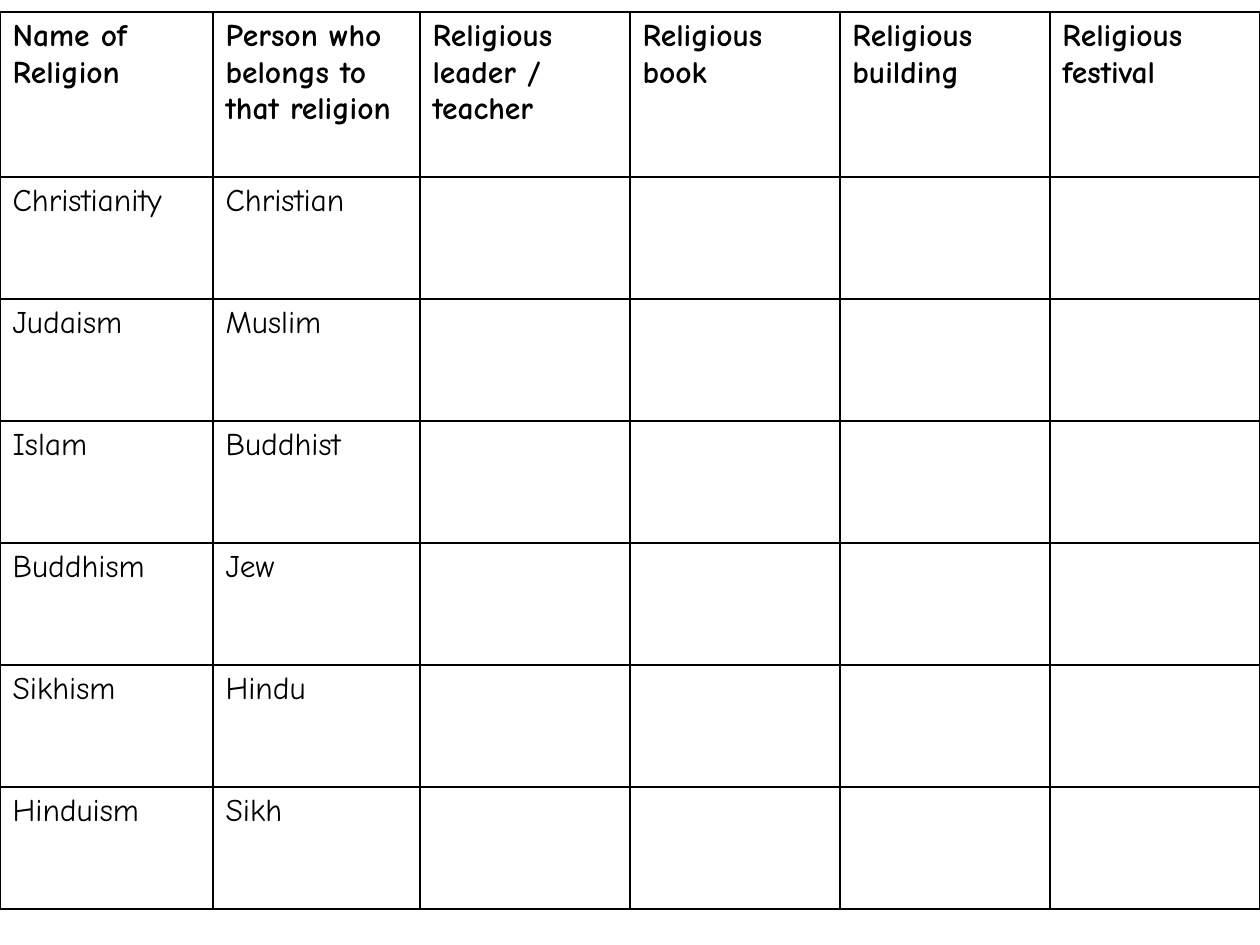
from dataclasses import dataclass

from lxml import etree
from pptx import Presentation
from pptx import util as u
from pptx.dml.color import RGBColor
from pptx.oxml.ns import qn

PX = 914400 // 126


@dataclass(frozen=True)
class Theme:
    font: str = "Comic Neue"
    size: int = 18
    ink: str = "000000"
    line: int = 1


THEME = Theme()
HEADERS = [
    "Name of Religion", "Person who belongs to that religion",
    "Religious leader / teacher", "Religious book",
    "Religious building", "Religious festival",
]
RELIGIONS = ["Christianity", "Judaism", "Islam", "Buddhism", "Sikhism", "Hinduism"]
BELIEVERS = ["Christian", "Muslim", "Buddhist", "Jew", "Hindu", "Sikh"]
COL_WIDTHS = [213, 207] + [210] * 4
HEADER_HEIGHT = 165


def px(n):
    return u.Emu(n * PX)


def add_borders(cell):
    """Draw all four edges; they must precede the cell fill in the XML."""
    tc_pr = cell._tc.get_or_add_tcPr()
    for i, side in enumerate(("lnL", "lnR", "lnT", "lnB")):
        ln = etree.Element(qn(f"a:{side}"), w=str(u.Pt(THEME.line)))
        fill = etree.SubElement(ln, qn("a:solidFill"))
        etree.SubElement(fill, qn("a:srgbClr"), val=THEME.ink)
        tc_pr.insert(i, ln)


def fill_cell(cell, words, bold):
    cell.fill.background()
    add_borders(cell)
    p = cell.text_frame.paragraphs[0]
    p.font.size = u.Pt(THEME.size)
    if words:
        r = p.add_run()
        r.text = words
        r.font.name = THEME.font
        r.font.size = u.Pt(THEME.size)
        r.font.bold = bold
        r.font.color.rgb = RGBColor.from_string(THEME.ink)


def religion_table(s, left, top, width, height):
    """Worksheet grid: a header row, then equal rows to fill in."""
    blanks = [""] * (len(HEADERS) - 2)
    rows = [HEADERS] + [[*pair, *blanks] for pair in zip(RELIGIONS, BELIEVERS)]
    table = s.shapes.add_table(
        len(rows), len(HEADERS), px(left), px(top), px(width), px(height)
    ).table
    table.first_row = table.horz_banding = False

    # Column widths and row heights
    for col, w in zip(table.columns, COL_WIDTHS):
        col.width = px(w)
    body_height = (height - HEADER_HEIGHT) // len(RELIGIONS)
    for i, row in enumerate(table.rows):
        row.height = px(body_height if i else HEADER_HEIGHT)

    # Cell contents
    for i, row in enumerate(rows):
        for j, words in enumerate(row):
            fill_cell(table.cell(i, j), words, bold=i == 0)


def main():
    prs = Presentation()
    prs.slide_width, prs.slide_height = u.Inches(10), u.Inches(7.5)
    s = prs.slides.add_slide(prs.slide_layouts[6])
    religion_table(s, 0, 12, 1260, 897)
    prs.save("out.pptx")


if __name__ == "__main__":
    main()
